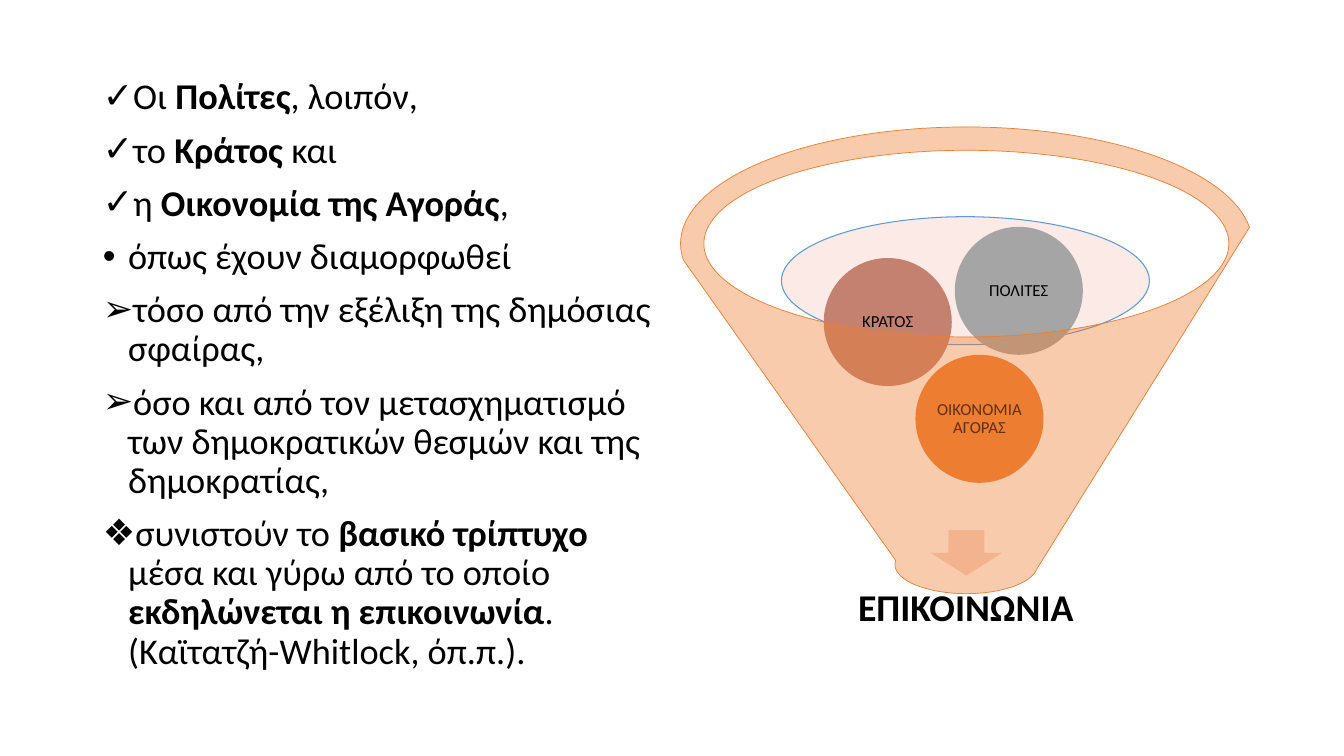
from dataclasses import dataclass

from lxml.etree import SubElement
from pptx import Presentation
from pptx.dml.color import RGBColor
from pptx.enum.shapes import MSO_SHAPE as Shape
from pptx.enum.text import MSO_ANCHOR as Anchor, MSO_AUTO_SIZE as AutoSize, PP_ALIGN as Align
from pptx.oxml.ns import qn
from pptx.util import Inches, Pt


@dataclass(frozen=True)
class Theme:
    font: str = "Calibri"
    text: str = "000000"
    orange: str = "ED7D31"
    gray: str = "A5A5A5"
    rose: str = "C48170"
    pale_rose: str = "F6CCBE"
    arrow: str = "F8D7CE"
    blue: str = "5B9BD5"
    body_size: float = 25.9
    result_size: float = 27
    circle_size: float = 12


theme = Theme()


def add_figure(kind, left, top, width, height, fill, line=None, line_width=0.75, opacity=None):
    figure = page.shapes.add_shape(kind, Inches(left), Inches(top), Inches(width), Inches(height))
    figure.shadow.inherit = False
    figure.fill.solid()
    figure.fill.fore_color.rgb = RGBColor.from_string(fill)
    if opacity:
        color = figure.fill._xPr.find(qn("a:solidFill"))[0]
        SubElement(color, qn("a:alpha"), val=str(opacity * 1000))
    if line:
        figure.line.color.rgb = RGBColor.from_string(line)
        figure.line.width = Pt(line_width)
    else:
        figure.line.fill.background()
    return figure


def add_span(para, text, size, bold=False):
    span = para.add_run()
    span.text = text
    span.font.name = theme.font
    span.font.size = Pt(size)
    span.font.bold = bold
    span.font.color.rgb = RGBColor.from_string(theme.text)


deck = Presentation()
deck.slide_width, deck.slide_height = Inches(13.33), Inches(7.5)
page = deck.slides.add_slide(deck.slide_layouts[1])
title = page.shapes.title
title.element.getparent().remove(title.element)

# Bulleted argument: bullet, then (text, bold) pieces
points = [
    ("✓", [("Οι ", False), ("Πολίτες", True), (", λοιπόν,", False)]),
    ("✓", [("το ", False), ("Κράτος", True), (" και", False)]),
    ("✓", [("η ", False), ("Οικονομία της Αγοράς", True), (",", False)]),
    ("•", [("όπως έχουν διαμορφωθεί", False)]),
    ("➢", [("τόσο από την εξέλιξη της δημόσιας σφαίρας,", False)]),
    ("➢", [("όσο και από τον μετασχηματισμό των δημοκρατικών θεσμών και της δημοκρατίας,", False)]),
    ("❖", [("συνιστούν το ", False), ("βασικό τρίπτυχο ", True),
           ("μέσα και γύρω από το οποίο ", False), ("εκδηλώνεται η επικοινωνία", True),
           (". (Καϊτατζή-Whitlock, όπ.π.).", False)]),
]
body = page.placeholders[1]
body.left, body.top, body.width, body.height = Inches(0.92), Inches(0.73), Inches(5.67), Inches(6.02)
frame = body.text_frame
frame.word_wrap = True
frame.auto_size = AutoSize.NONE
frame.vertical_anchor = Anchor.TOP
for index, (bullet, pieces) in enumerate(points):
    para = frame.add_paragraph() if index else frame.paragraphs[0]
    properties = para._p.get_or_add_pPr()
    properties.set("marL", str(Inches(0.25)))
    properties.set("indent", str(-Inches(0.25)))
    SubElement(properties, qn("a:buFont"), typeface="Arial")
    SubElement(properties, qn("a:buChar"), char=bullet)
    para.line_spacing = 0.9
    para.space_before = Pt(10 if index else 0)
    for text, bold in pieces:
        add_span(para, text, theme.body_size, bold)

# Funnel mouth and outlet arrow
add_figure(Shape.OVAL, 7.75, 2.15, 3.65, 1.27, theme.pale_rose, theme.blue, opacity=40)
add_figure(Shape.DOWN_ARROW, 9.23, 5.26, 0.71, 0.45, theme.arrow)

# Result below the funnel
result = page.shapes.add_textbox(Inches(7.88), Inches(5.62), Inches(3.4), Inches(0.85))
result.text_frame.word_wrap = True
result.text_frame.vertical_anchor = Anchor.MIDDLE
para = result.text_frame.paragraphs[0]
para.alignment = Align.CENTER
para.line_spacing = 0.9
add_span(para, "ΕΠΙΚΟΙΝΩΝΙΑ", theme.result_size, True)

# The three parties inside the funnel
parties = [
    ("ΟΙΚΟΝΟΜΙΑ ΑΓΟΡΑΣ", 9.08, 3.52, theme.orange),
    ("ΚΡΑΤΟΣ", 8.17, 2.56, theme.rose),
    ("ΠΟΛΙΤΕΣ", 9.47, 2.25, theme.gray),
]
for name, left, top, fill in parties:
    circle = add_figure(Shape.OVAL, left, top, 1.27, 1.27, fill)
    frame = circle.text_frame
    frame.word_wrap = True
    frame.vertical_anchor = Anchor.MIDDLE
    frame.margin_left = frame.margin_right = frame.margin_top = frame.margin_bottom = Inches(0.02)
    para = frame.paragraphs[0]
    para.alignment = Align.CENTER
    para.line_spacing = 0.9
    add_span(para, name, theme.circle_size)

# Translucent funnel in front
add_figure(Shape.FUNNEL, 6.75, 1.26, 5.67, 4.63, theme.orange, theme.orange, 0.5, opacity=40)

deck.save("out.pptx")
